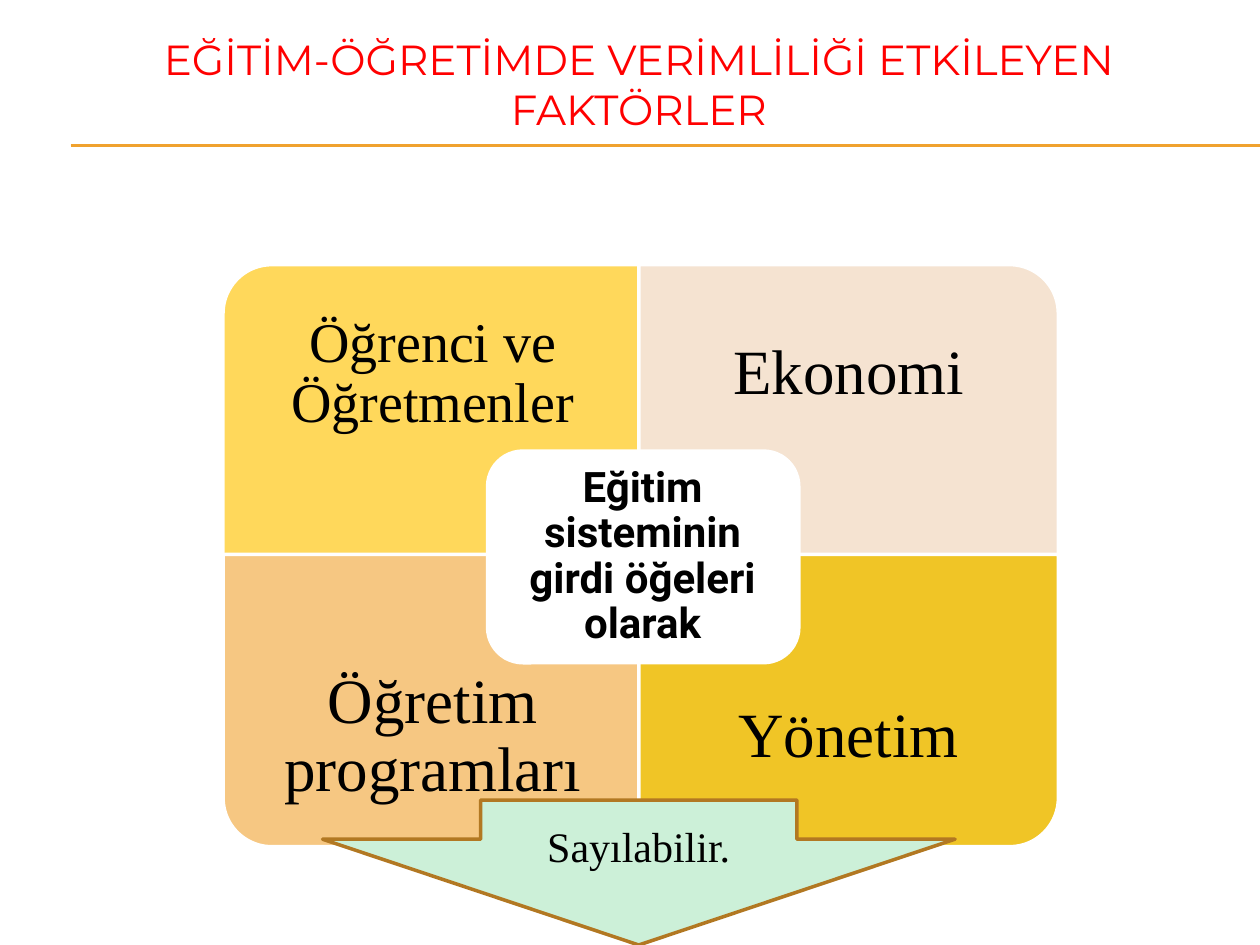
from dataclasses import dataclass

from pptx import Presentation
from pptx.dml.color import RGBColor
from pptx.enum.shapes import MSO_CONNECTOR, MSO_SHAPE
from pptx.enum.text import MSO_ANCHOR, MSO_AUTO_SIZE, PP_ALIGN
from pptx.oxml.ns import qn
from pptx.util import Inches, Pt

LINE = MSO_CONNECTOR.STRAIGHT
CORNER = MSO_SHAPE.ROUND_1_RECTANGLE
ROUND = MSO_SHAPE.ROUNDED_RECTANGLE
ARROW = MSO_SHAPE.DOWN_ARROW
MIDDLE = MSO_ANCHOR.MIDDLE
FIXED = MSO_AUTO_SIZE.NONE
CENTER = PP_ALIGN.CENTER


@dataclass(frozen=True)
class Theme:
    """Colours, fonts and type sizes of the slide."""
    black: str = "000000"
    white: str = "FFFFFF"
    red: str = "FF0000"
    rule: str = "F0A22E"
    mint: str = "CCF0D8"
    brown: str = "B27822"
    head: str = "Montserrat"
    serif: str = "Times New Roman"
    sans: str = "Roboto"
    small: int = 24
    mid: int = 32
    large: int = 36


@dataclass(frozen=True)
class Grid:
    """Two-by-two grid of quadrants, in inches."""
    left: float = 1.77
    top: float = 2.1
    wide: float = 3.33
    high: float = 2.32
    col: float = 3.3
    row: float = 2.3


THEME = Theme()
GRID = Grid()
CELLS = [
    # column, row, turn, fill, size, inset, words
    (0, 0, 270, "FFD85B", THEME.mid, 0.25, "Öğrenci ve Öğretmenler"),
    (1, 0, 0, "F5E3D1", THEME.large, 0.28, "Ekonomi"),
    (0, 1, 180, "F6C782", THEME.large, 0.28, "Öğretim programları"),
    (1, 1, 90, "F0C526", THEME.large, 0.28, "Yönetim"),
]


def write(shape, text, size=THEME.small, font=THEME.serif,
          color=THEME.black, bold=False, inset=None, space=None):
    """Put centred, formatted text into a shape."""
    frame = shape.text_frame
    frame.word_wrap = True
    frame.auto_size = FIXED
    frame.vertical_anchor = MIDDLE
    if inset is not None:
        frame.margin_left = frame.margin_right = Inches(inset)
        frame.margin_top = frame.margin_bottom = Inches(inset)
    para = frame.paragraphs[0]
    para.alignment = CENTER
    para.line_spacing = space
    run = para.add_run()
    run.text = text
    run.font.size = Pt(size)
    run.font.name = font
    run.font.bold = bold
    run.font.color.rgb = RGBColor.from_string(color)


def draw(slide, kind, box, fill, line=THEME.white):
    """Add a filled, outlined preset shape."""
    shape = slide.shapes.add_shape(kind, *map(Inches, box))
    shape.shadow.inherit = False
    shape.fill.solid()
    shape.fill.fore_color.rgb = RGBColor.from_string(fill)
    shape.line.color.rgb = RGBColor.from_string(line)
    shape.line.width = Pt(2)
    return shape


def label(slide, box, text, **style):
    """Add a text box with formatted text."""
    write(slide.shapes.add_textbox(*map(Inches, box)), text, **style)


def rule(slide, y):
    """Add a thin line from the left margin to the slide's right edge."""
    line = slide.shapes.add_connector(
        LINE, Inches(0.56), Inches(y), Inches(10), Inches(y))
    line.line.color.rgb = RGBColor.from_string(THEME.rule)
    line.line.width = Pt(0.75)
    props = line._element.spPr
    props.append(props.makeelement(qn("a:effectLst"), {}))


def title(slide, text):
    """Place and fill the title."""
    shape = slide.shapes.title
    shape.left, shape.top, shape.width, shape.height = map(
        Inches, (0.82, 0.01, 8.5, 1.31))
    write(shape, text, font=THEME.head, color=THEME.red)


def cell(slide, col, row, turn, fill, size, inset, text):
    """Add one quadrant, its round corner turned outward, and its label."""
    left = GRID.left + col * GRID.col
    top = GRID.top + row * GRID.row
    wide, high = GRID.wide, GRID.high
    if turn % 180:
        wide, high = high, wide
    box = (left + (GRID.wide - wide) / 2,
           top + (GRID.high - high) / 2, wide, high)
    draw(slide, CORNER, box, fill).rotation = turn
    tall = GRID.high * 0.75
    label(slide, (left, top + row * (GRID.high - tall), GRID.wide, tall),
          text, size=size, inset=inset, space=0.9)


def main():
    """Build and save the slide."""
    deck = Presentation()
    deck.slide_width, deck.slide_height = Inches(10), Inches(7.5)
    slide = deck.slides.add_slide(deck.slide_layouts[5])
    for y in (1.15, 1.16):
        rule(slide, y)
    title(slide, "EĞİTİM-ÖĞRETİMDE VERİMLİLİĞİ ETKİLEYEN FAKTÖRLER")
    for item in CELLS:
        cell(slide, *item)
    draw(slide, ROUND, (3.87, 3.58, 2.47, 1.68), THEME.white)
    label(slide, (3.95, 3.66, 2.3, 1.52),
          "Eğitim sisteminin girdi öğeleri olarak",
          font=THEME.sans, bold=True, inset=0.1, space=0.9)
    arrow = draw(slide, ARROW, (2.56, 6.35, 5.02, 1.15),
                 THEME.mint, THEME.brown)
    arrow.adjustments[0], arrow.adjustments[1] = 0.5, 0.73
    write(arrow, "Sayılabilir.")
    deck.save("out.pptx")


if __name__ == "__main__":
    main()
